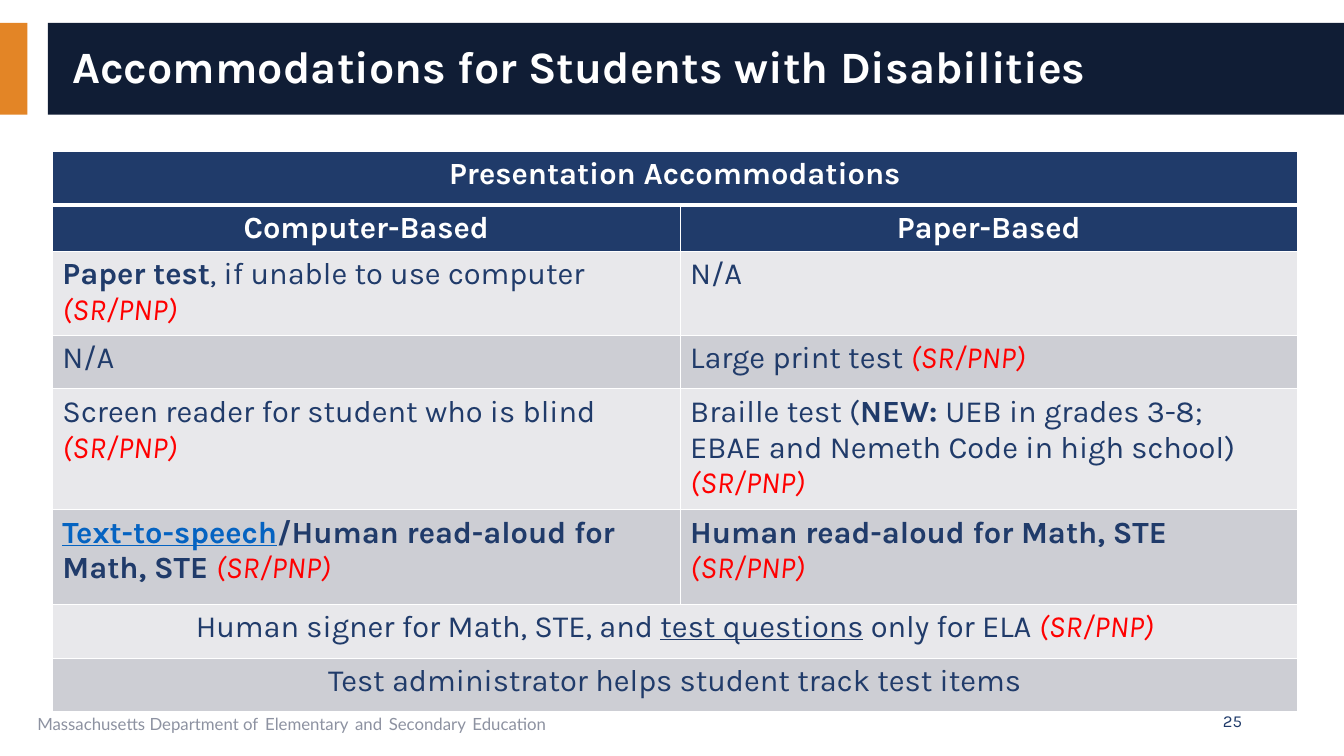
from lxml import etree
from pptx import Presentation
from pptx.dml.color import RGBColor
from pptx.enum.shapes import MSO_SHAPE
from pptx.enum.text import MSO_ANCHOR, PP_ALIGN
from pptx.oxml.ns import qn
from pptx.util import Cm, Pt

RECT = MSO_SHAPE.RECTANGLE
TOP, MIDDLE = MSO_ANCHOR.TOP, MSO_ANCHOR.MIDDLE
LEFT, CENTER, RIGHT = PP_ALIGN.LEFT, PP_ALIGN.CENTER, PP_ALIGN.RIGHT

COLORS = {
    "orange": "E38526", "dark": "101D35", "navy": "203B6A", "white": "FFFFFF",
    "light": "E8E8EB", "mid": "CDCED4", "red": "FF0000", "link": "0563C1",
    "footer": "8D92A1",
}
BREAK = "\v"
BOLD = {"bold": True}
UNDERLINE = {"underline": True}
HEADER = {"bold": True, "color": "white"}
LINK = {"bold": True, "underline": True, "color": "link"}
SR_PNP = ("(SR/PNP)", {"italic": True, "color": "red"})

# Each row holds one cell (spanning both columns) or two; a cell is a list of runs.
ROWS = [
    [[("Presentation Accommodations", HEADER)]],
    [[("Computer-Based", HEADER)], [("Paper-Based", HEADER)]],
    [[("Paper test", BOLD), (", if unable to use computer ", {}), SR_PNP],
     [("N/A", {})]],
    [[("N/A", {})], [("Large print test ", {}), SR_PNP]],
    [[("Screen reader for student who is blind ", {}), SR_PNP],
     [("Braille test (", {}), ("NEW: ", BOLD), ("UEB in grades 3-8;", {}),
      (BREAK, {}), ("EBAE and Nemeth Code in high school) ", {}), SR_PNP]],
    [[("Text-to-speech", LINK), ("/Human read-aloud for Math, STE ", BOLD), SR_PNP],
     [("Human read-aloud for Math, STE ", BOLD), SR_PNP]],
    [[("Human signer for Math, STE, and ", {}), ("test questions", UNDERLINE),
      (" only for ELA ", {}), SR_PNP]],
    [[("Test administrator helps student track test items", {})]],
]
ROW_HEIGHTS = [1.35, 1.17, 1.35, 1.35, 2.39, 2.39, 1.35, 1.35]
COL_WIDTHS = [15.82, 15.55]
HEADER_ROWS = 2


def rgb(name):
    return RGBColor.from_string(COLORS[name])


class SlideBuilder:
    def __init__(self, slide, font="Karla"):
        self.slide = slide
        self.font = font

    def bar(self, x, y, w, h, color):
        sp = self.slide.shapes.add_shape(RECT, Cm(x), Cm(y), Cm(w), Cm(h))
        sp.shadow.inherit = False
        sp.fill.solid()
        sp.fill.fore_color.rgb = rgb(color)
        sp.line.fill.background()

    def runs(self, p, runs, size, color="navy", font=None):
        """Fill a paragraph from (text, style) pairs."""
        for text, style in runs:
            if text == BREAK:
                p.add_line_break()
                continue
            r = p.add_run()
            r.text = text
            r.font.name = font or self.font
            r.font.size = Pt(style.get("size", size))
            r.font.color.rgb = rgb(style.get("color", color))
            r.font.bold = style.get("bold", False)
            r.font.italic = style.get("italic", False)
            r.font.underline = style.get("underline", False)

    def text(self, x, y, w, h, runs, size, color="navy", font=None,
             align=LEFT, anchor=MIDDLE):
        tf = self.slide.shapes.add_textbox(Cm(x), Cm(y), Cm(w), Cm(h)).text_frame
        tf.word_wrap = True
        tf.vertical_anchor = anchor
        p = tf.paragraphs[0]
        p.alignment = align
        self.runs(p, runs, size, color, font)
        return p

    def borders(self, cell, top=1, bottom=1):
        """Give a cell white borders; widths are in points."""
        tc_pr = cell._tc.get_or_add_tcPr()
        widths = {"a:lnL": 1, "a:lnR": 1, "a:lnT": top, "a:lnB": bottom}
        for i, (tag, width) in enumerate(widths.items()):
            ln = etree.Element(qn(tag), w=str(Pt(width)))
            fill = etree.SubElement(ln, qn("a:solidFill"))
            etree.SubElement(fill, qn("a:srgbClr"), val=COLORS["white"])
            tc_pr.insert(i, ln)

    def cell(self, cell, runs, row, align):
        if row < HEADER_ROWS:
            color = "navy"
        else:
            color = "mid" if row % 2 else "light"
        cell.fill.solid()
        cell.fill.fore_color.rgb = rgb(color)
        if row == 1:
            cell.vertical_anchor = MIDDLE
            cell.margin_left = cell.margin_right = Cm(0.15)
            cell.margin_top = cell.margin_bottom = 0
        p = cell.text_frame.paragraphs[0]
        p.alignment = align
        self.runs(p, runs, 22)

    def table(self, x, y, rows, widths, heights):
        frame = self.slide.shapes.add_table(
            len(rows), len(widths), Cm(x), Cm(y), Cm(sum(widths)), Cm(sum(heights)))
        tbl = frame.table
        tbl.first_row = tbl.horz_banding = False
        for col, width in zip(tbl.columns, widths):
            col.width = Cm(width)
        for i, (cells, height) in enumerate(zip(rows, heights)):
            tbl.rows[i].height = Cm(height)
            spans = len(cells) == 1
            if spans:
                tbl.cell(i, 0).merge(tbl.cell(i, len(widths) - 1))
            align = CENTER if spans or i < HEADER_ROWS else LEFT
            for j, runs in enumerate(cells):
                self.cell(tbl.cell(i, j), runs, i, align)
            for j in range(len(widths)):
                self.borders(tbl.cell(i, j), 3 if i == 1 else 1, 3 if i == 0 else 1)


def main():
    prs = Presentation()
    prs.slide_width, prs.slide_height = Cm(33.87), Cm(19.05)
    s = SlideBuilder(prs.slides.add_slide(prs.slide_layouts[6]))

    s.bar(0, 0.58, 0.69, 2.31, "orange")
    s.bar(1.21, 0.58, 32.66, 2.31, "dark")

    wide_space = (" ", {"size": 18})
    footer = [("Massachusetts Department of", {})]
    for word in ("Elementary", "and", "Secondary", "Education"):
        footer += [wide_space, (word, {})]
    s.text(0.69, 17.65, 21.44, 1.02, footer, 12, "footer", "Lato", anchor=TOP)

    title = s.text(1.57, 0.81, 31.6, 1.88,
                   [("Accommodations for Students with Disabilities", HEADER)], 32)
    title.line_spacing = 0.9
    s.text(23.93, 17.65, 7.62, 1.02, [("25", {})], 12, align=RIGHT)

    s.table(1.32, 3.81, ROWS, COL_WIDTHS, ROW_HEIGHTS)
    prs.save("out.pptx")


if __name__ == "__main__":
    main()
